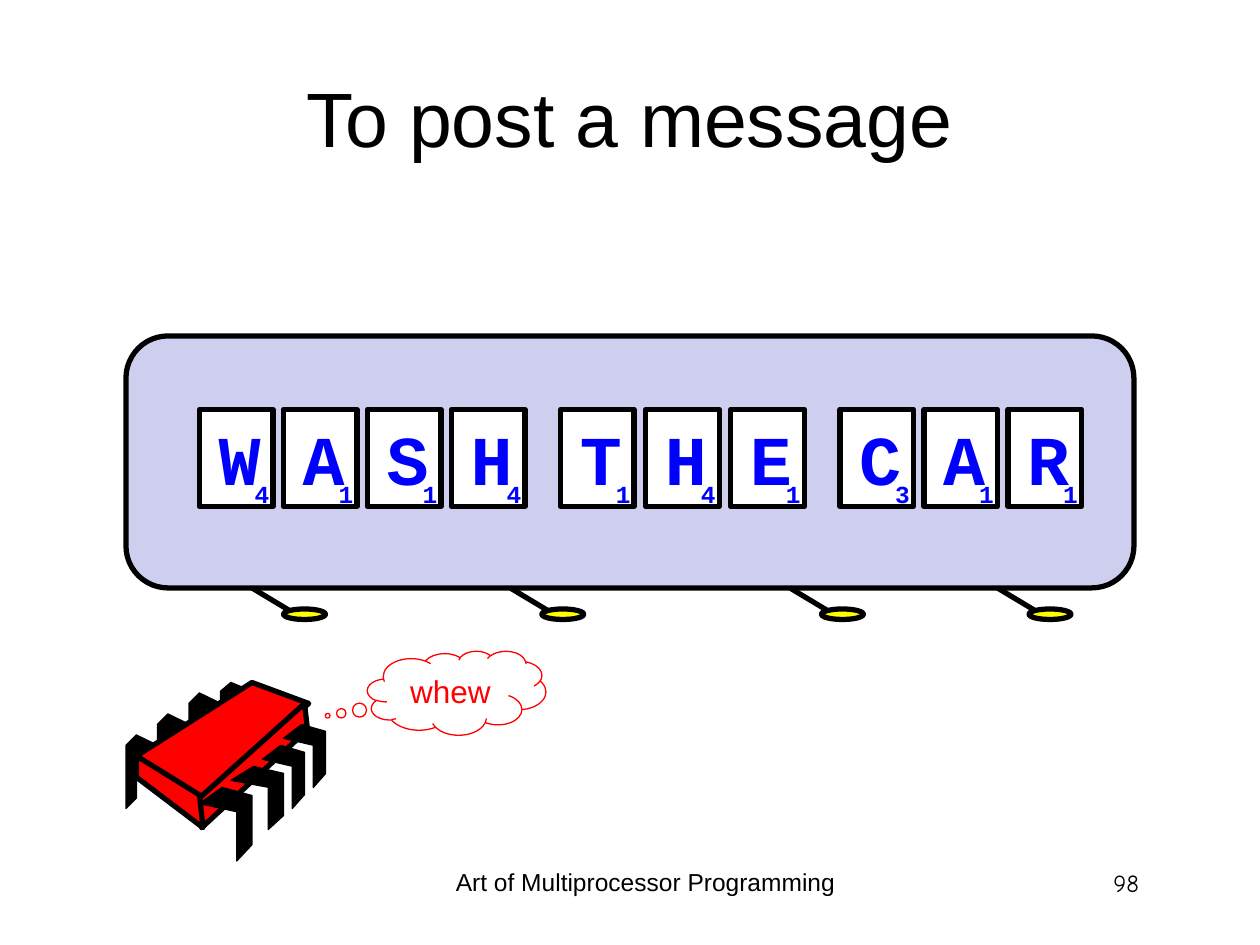
from lxml.etree import SubElement
from pptx import Presentation
from pptx.dml.color import RGBColor
from pptx.enum.shapes import MSO_CONNECTOR as Connector, MSO_SHAPE as Shape
from pptx.enum.text import MSO_ANCHOR as Anchor, PP_ALIGN as Align
from pptx.oxml.ns import qn
from pptx.util import Pt

BLACK, BLUE, RED, WHITE = "000000", "0000FF", "FF0000", "FFFFFF"

POINTS = {"W": 4, "A": 1, "S": 1, "H": 4, "T": 1, "E": 1, "C": 3, "R": 1}
WORDS = [("WASH", 114, 48), ("THE", 320.4, 48.6), ("CAR", 480, 48)]
LAMPS = [144, 291.6, 451.4, 570]

BACK_LEG = [(1, 0.14), (0.33, 0), (0, 0.14), (0, 1), (0.33, 0.86), (0.33, 0.29), (1, 0.43)]
FRONT_LEG = [(0.43, 0), (0, 0.22), (0.71, 0.33), (0.71, 1), (1, 0.78), (1, 0.11)]
BACK_LEGS = [(72, 420, 18, 42), (90, 408, 18, 42), (108, 396, 18, 42), (126, 390, 18, 36)]
FRONT_LEGS = [(114, 450, 30, 42), (132, 438, 30, 36), (150, 426, 24, 36), (162, 414, 24, 36)]
CHIP_FACES = [
    [(144, 390), (78, 432), (115.2, 457.2), (176.4, 402)],
    [(174, 402), (114, 456), (115.2, 473), (175.7, 417)],
    [(78, 432), (78, 444.2), (116, 473), (114, 454.3)],
]


def color(code):
    return RGBColor.from_string(code)


def write(shape, text, size=18, font="Arial", ink=BLACK, bold=False,
          align=Align.CENTER, anchor=Anchor.TOP, wrap=True, top=3.6, bottom=3.6):
    frame = shape.text_frame
    frame.word_wrap = wrap
    frame.vertical_anchor = anchor
    frame.margin_top, frame.margin_bottom = Pt(top), Pt(bottom)
    para = frame.paragraphs[0]
    para.alignment = align
    para.space_before = Pt(0)
    span = para.add_run()
    span.text = text
    span.font.name = font
    span.font.size = Pt(size)
    span.font.bold = bold
    span.font.color.rgb = color(ink)


class Painter:
    thick = 3
    thin = 0.75

    def __init__(self, page):
        self.page = page
        self.shapes = page.shapes

    def title(self, text, left, top, width, height):
        box = self.shapes.title
        box.left, box.top, box.width, box.height = map(Pt, (left, top, width, height))
        write(box, text, size=44, anchor=Anchor.MIDDLE)

    def text(self, text, left, top, width, height, **style):
        box = self.shapes.add_textbox(*map(Pt, (left, top, width, height)))
        write(box, text, **style)

    def finish(self, shape, fill, line, weight):
        shape.shadow.inherit = False
        if fill:
            shape.fill.solid()
            shape.fill.fore_color.rgb = color(fill)
        else:
            shape.fill.background()
        shape.line.color.rgb = color(line)
        shape.line.width = Pt(weight)

    def shape(self, kind, left, top, width, height, fill=None, line=BLACK, weight=thick):
        box = self.shapes.add_shape(kind, *map(Pt, (left, top, width, height)))
        self.finish(box, fill, line, weight)
        return box

    def polygon(self, points, fill, weight):
        corners = [(Pt(x), Pt(y)) for x, y in points]
        builder = self.shapes.build_freeform(*corners[0])
        builder.add_line_segments(corners[1:], close=True)
        self.finish(builder.convert_to_shape(), fill, BLACK, weight)

    def line(self, x1, y1, x2, y2):
        rod = self.shapes.add_connector(Connector.STRAIGHT, *map(Pt, (x1, y1, x2, y2)))
        rod.line.color.rgb = color(BLACK)
        rod.line.width = Pt(self.thick)
        SubElement(rod._element.spPr, qn("a:effectLst"))

    def legs(self, outline, places):
        for left, top, width, height in places:
            points = [(left + x * width, top + y * height) for x, y in outline]
            self.polygon(points, BLACK, self.thin)

    def chip(self):
        self.legs(BACK_LEG, BACK_LEGS)
        for face in CHIP_FACES:
            self.polygon(face, RED, self.thick)
        self.legs(FRONT_LEG, FRONT_LEGS)

    def lamp(self, left):
        self.line(left, 336, left + 30, 354)
        self.shape(Shape.OVAL, left + 18, 348, 24, 6, fill="FFFF00")

    def tile(self, letter, left):
        style = dict(font="Courier New", ink=BLUE, bold=True, align=Align.RIGHT)
        box = self.shape(Shape.RECTANGLE, left, 234, 42, 55.5, fill=WHITE)
        write(box, letter, size=40, top=3.6, bottom=0, **style)
        self.text(str(POINTS[letter]), left + 24, 270, 23, 24, size=14, wrap=False, **style)


def main():
    deck = Presentation()
    deck.slide_width, deck.slide_height = Pt(720), Pt(540)
    painter = Painter(deck.slides.add_slide(deck.slide_layouts[5]))

    painter.title("To post a message", 36, 21.6, 648, 90)
    board = painter.shape(Shape.ROUNDED_RECTANGLE, 72, 192, 576, 144, fill="CECEEF")
    board.adjustments[0] = 0.167
    painter.chip()
    for left in LAMPS:
        painter.lamp(left)
    for word, left, step in WORDS:
        for index, letter in enumerate(word):
            painter.tile(letter, left + index * step)

    thought = painter.shape(Shape.CLOUD_CALLOUT, 210, 372, 102, 48, line=RED, weight=painter.thin)
    thought.adjustments[0], thought.adjustments[1] = -0.723, 0.271
    write(thought, "whew", ink=RED, anchor=Anchor.MIDDLE)

    painter.text("Art of Multiprocessor Programming", 246, 492, 246, 37, size=14)
    painter.text("98", 508, 492.5, 150, 36, size=14, font="Comic Neue", align=Align.RIGHT)
    deck.save("out.pptx")


if __name__ == "__main__":
    main()
